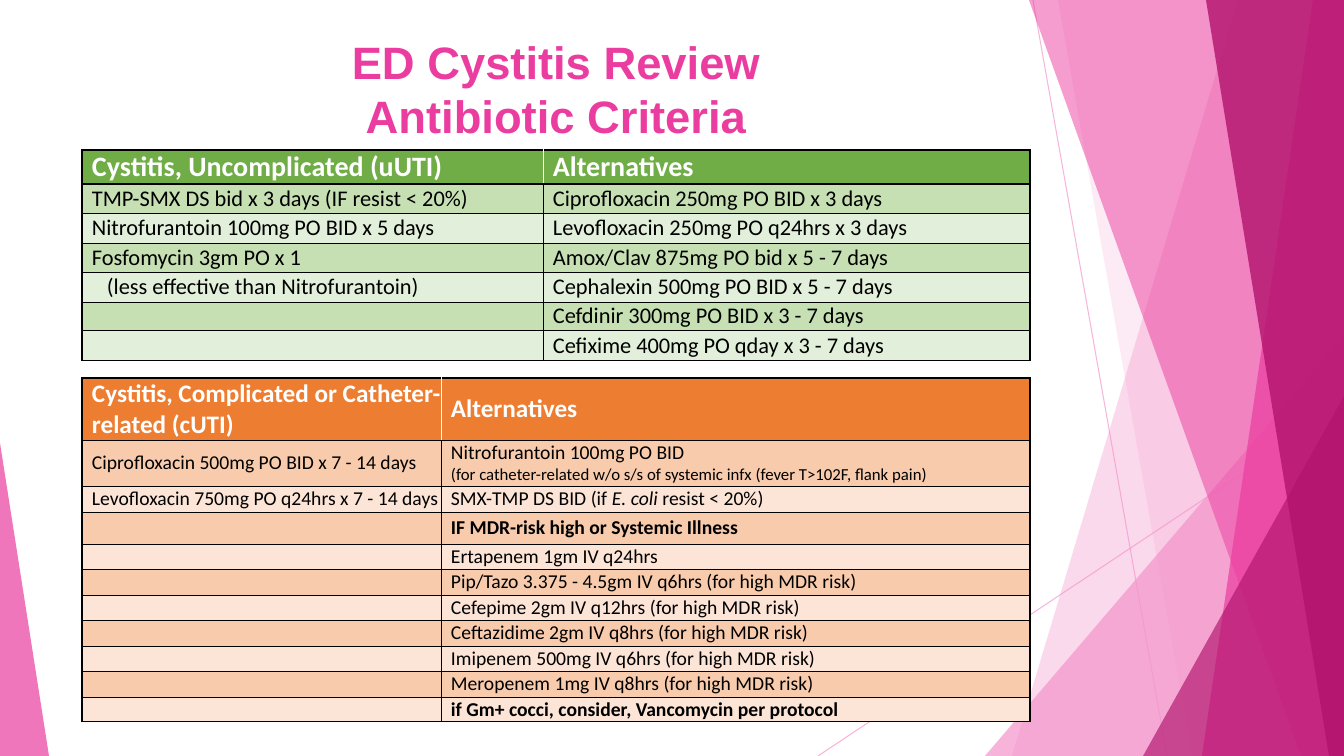
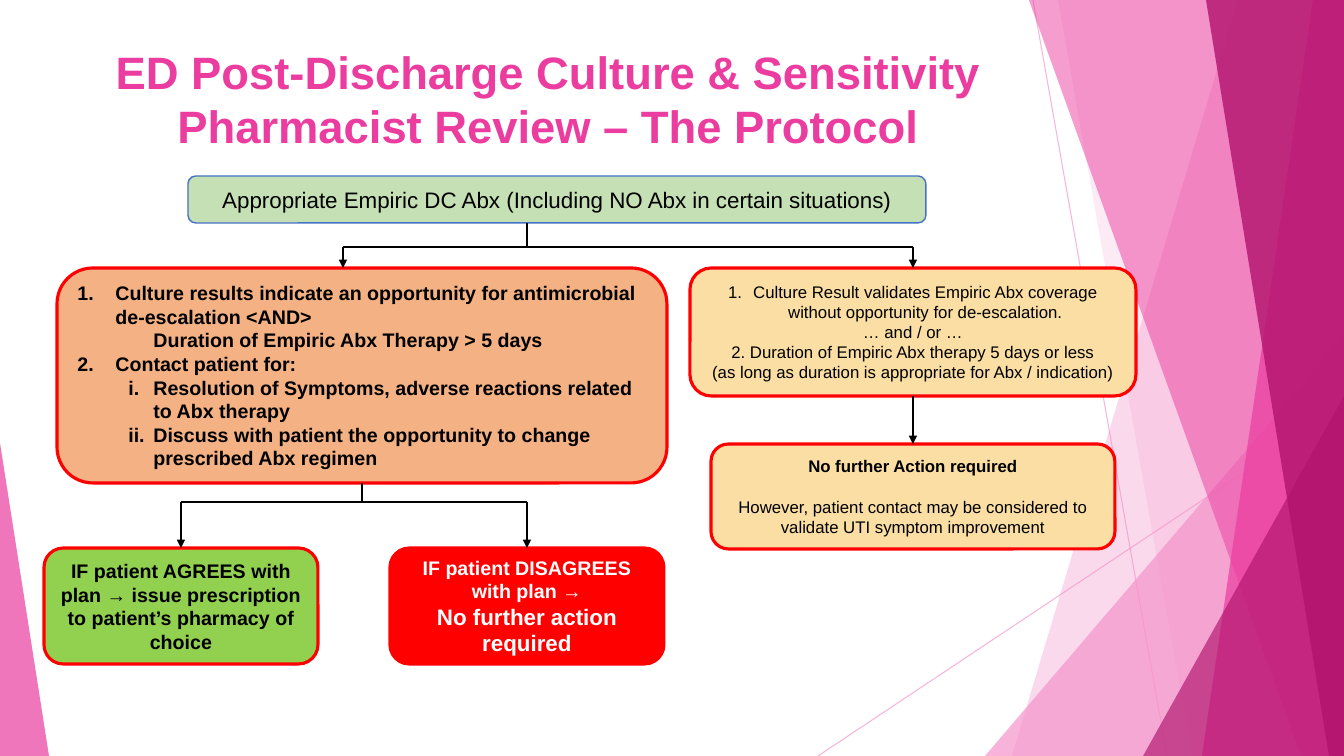
from dataclasses import dataclass
from typing import NamedTuple

from lxml.etree import SubElement
from pptx import Presentation
from pptx.dml.color import RGBColor
from pptx.enum.shapes import MSO_CONNECTOR, MSO_SHAPE
from pptx.enum.text import MSO_ANCHOR, PP_ALIGN
from pptx.oxml import parse_xml
from pptx.oxml.ns import nsdecls, qn
from pptx.util import Pt

WIDE, HIGH = 1344, 756
UNIT = 12192000 / WIDE
PINK, LIGHT, DEEP = "EB3D9F", "F496CB", "B2136D"
BLACK, WHITE, RED, CREAM = "000000", "FFFFFF", "FF0000", "FADEA3"
SANS, BODY = "Arial", "Calibri"


class Run(NamedTuple):
    text: str
    size: float = 14
    bold: bool = False
    slant: bool = False


@dataclass
class Para:
    runs: list[Run]
    left: int = 0
    hang: int = 0
    mark: str = ""
    start: int = 1
    gap: float = 0


class Band(NamedTuple):
    tint: str
    fade: int
    points: list[tuple[int, int]]


class Wedge(NamedTuple):
    box: tuple[int, int, int, int]
    peak: int
    tint: str
    fade: int


class Node(NamedTuple):
    name: str
    box: tuple[int, int, int, int]
    fill: str
    paras: list[Para]
    edge: str = RED
    weight: float = 2.25
    ink: str = BLACK
    align: PP_ALIGN = PP_ALIGN.CENTER


class Wire(NamedTuple):
    ends: tuple[int, int, int, int]
    weight: float = 1
    arrow: bool = False
    tail: str = ""
    head: str = ""


@dataclass
class Grid:
    box: tuple[int, int]
    cols: list[int]
    rows: list[int]
    tints: tuple[str, str, str]
    size: int
    edge: float
    cells: list[tuple[list[Para], list[Para]]]


def px(num: float) -> int:
    return round(num * UNIT)


def paint(code: str) -> RGBColor:
    return RGBColor.from_string(code)


def line(text: str, size: float = 14, bold: bool = False, **more) -> Para:
    return Para([Run(text, size, bold)], **more)


def fade(shape, part: int) -> None:
    for tint in shape._element.spPr.iter(qn("a:srgbClr")):
        SubElement(tint, qn("a:alpha"), val=str(part * 1000))


def fill(shape, tint: str) -> None:
    shape.shadow.inherit = False
    shape.fill.solid()
    shape.fill.fore_color.rgb = paint(tint)
    shape.line.fill.background()


def write(frame, paras: list[Para], face: str, ink: str, align: PP_ALIGN) -> None:
    frame.word_wrap = True
    for num, para in enumerate(paras):
        p = frame.paragraphs[0] if num == 0 else frame.add_paragraph()
        p.alignment = align
        if face == SANS:
            p.line_spacing = Pt(round(para.runs[0].size * 1.2, 1))
        if para.gap:
            p.space_before = Pt(para.gap)
        props = p._p.get_or_add_pPr()
        if para.left:
            props.set("marL", str(px(para.left)))
            props.set("indent", str(-px(para.hang)))
        if para.mark:
            mark = SubElement(props, qn("a:buAutoNum"), type=para.mark)
            if para.start > 1:
                mark.set("startAt", str(para.start))
        for run in para.runs:
            r = p.add_run()
            r.text = run.text
            r.font.name, r.font.size = face, Pt(run.size)
            r.font.bold, r.font.italic = run.bold, run.slant
            r.font.color.rgb = paint(ink)


def wire(slide, item: Wire, nodes: dict, tint: str = BLACK):
    link = slide.shapes.add_connector(MSO_CONNECTOR.STRAIGHT, *map(px, item.ends))
    if item.tail:
        link.begin_connect(nodes[item.tail], 2)
    if item.head:
        link.end_connect(nodes[item.head], 0)
    link.line.color.rgb = paint(tint)
    link.line.width = Pt(item.weight)
    if item.arrow:
        SubElement(link.line._get_or_add_ln(), qn("a:tailEnd"), type="triangle")
    SubElement(link._element.spPr, qn("a:effectLst"))
    return link


def band(slide, item: Band) -> None:
    pen = slide.shapes.build_freeform(*item.points[0], scale=UNIT)
    pen.add_line_segments(item.points[1:], close=True)
    shape = pen.convert_to_shape()
    fill(shape, item.tint)
    fade(shape, item.fade)


def wedge(slide, item: Wedge) -> None:
    shape = slide.shapes.add_shape(MSO_SHAPE.ISOSCELES_TRIANGLE, *map(px, item.box))
    shape.adjustments[0] = item.peak
    fill(shape, item.tint)
    fade(shape, item.fade)


def slant(top: int, foot: int, tint: str, part: int) -> Band:
    return Band(tint, part, [(top, 0), (WIDE, 0), (WIDE, HIGH), (foot, HIGH)])


RAYS = [Wire((1033, 0, 1167, HIGH), 0.75), Wire((WIDE, 406, 818, HIGH), 0.75)]
DECOR = [
    slant(1238, 1012, LIGHT, 36),
    slant(1058, 1192, LIGHT, 20),
    Wedge((985, 336, 359, 420), 1, LIGHT, 72),
    slant(1029, 1301, PINK, 50),
    slant(1313, 1202, PINK, 70),
    slant(1206, 1329, DEEP, 80),
    Wedge((1143, 396, 201, 360), 1, DEEP, 66),
    Wedge((0, 443, 49, 313), 0, PINK, 70),
]


def start(deck, box: tuple[int, int, int, int], title: list[str]):
    slide = deck.slides.add_slide(deck.slide_layouts[6])
    for ray in RAYS:
        fade(wire(slide, ray, {}, LIGHT), 70)
    for item in DECOR:
        (band if isinstance(item, Band) else wedge)(slide, item)
    frame = slide.shapes.add_textbox(*map(px, box)).text_frame
    write(frame, [line(text, 32.4, True) for text in title], SANS, PINK, PP_ALIGN.CENTER)
    return slide


def rule(cell, side: str, tint: str, weight: float, spot: int) -> None:
    cell._tc.get_or_add_tcPr().insert(spot, parse_xml(
        f'<a:{side} {nsdecls("a")} w="{int(weight * 12700)}"><a:solidFill>'
        f'<a:srgbClr val="{tint}"/></a:solidFill></a:{side}>'))


def table(slide, grid: Grid) -> None:
    last = len(grid.rows) - 1
    area = (*grid.box, sum(grid.cols), sum(grid.rows))
    sheet = slide.shapes.add_table(last + 1, 2, *map(px, area)).table
    sheet.horz_banding = False
    for col, wide in zip(sheet.columns, grid.cols):
        col.width = px(wide)
    for y, (row, high) in enumerate(zip(sheet.rows, grid.rows)):
        row.height = px(high)
        tint = grid.tints[0] if y == 0 else grid.tints[2 - y % 2]
        for x, paras in enumerate(grid.cells[y]):
            cell = sheet.cell(y, x)
            cell.margin_left, cell.margin_right = px(10), 0
            cell.margin_top = cell.margin_bottom = 0
            cell.vertical_anchor = MSO_ANCHOR.MIDDLE
            cell.fill.solid()
            cell.fill.fore_color.rgb = paint(tint)
            inner = WHITE if y == 0 else BLACK
            top = 1 if y == 0 else grid.edge if y == 1 else 0.5
            foot = grid.edge if y in (0, last) else 0.5
            sides = [
                ("lnL", inner if x else BLACK, 0.5 if x else 1),
                ("lnR", BLACK if x else inner, 1 if x else 0.5),
                ("lnT", BLACK, top),
                ("lnB", BLACK, foot),
            ]
            for spot, (side, ink, weight) in enumerate(sides):
                rule(cell, side, ink, weight, spot)
            if paras:
                write(cell.text_frame, paras, BODY, inner, PP_ALIGN.LEFT)
            else:
                SubElement(cell.text_frame.paragraphs[0]._p, qn("a:endParaRPr"),
                           sz=str(grid.size * 100))


def pair(left: str, right: str, size: int, bold: bool = False):
    return tuple([line(text, size, bold)] if text else [] for text in (left, right))


SIMPLE = Grid(
    (82, 150), [461, 487], [34] + [29, 30] * 3, ("70AD47", "C6E0B4", "E2EFDA"), 16, 1,
    [
        pair("Cystitis, Uncomplicated (uUTI)", "Alternatives", 20, True),
        pair("TMP-SMX DS bid x 3 days (IF resist < 20%)", "Ciprofloxacin 250mg PO BID x 3 days", 16),
        pair("Nitrofurantoin 100mg PO BID x 5 days", "Levofloxacin 250mg PO q24hrs x 3 days", 16),
        pair("Fosfomycin 3gm PO x 1", "Amox/Clav 875mg PO bid x 5 - 7 days", 16),
        ([line("(less effective than Nitrofurantoin)", 16, left=15)],
         [line("Cephalexin 500mg PO BID x 5 - 7 days", 16)]),
        pair("", "Cefdinir 300mg PO BID x 3 - 7 days", 16),
        pair("", "Cefixime 400mg PO qday x 3 - 7 days", 16),
    ])

RISK = ["Pip/Tazo 3.375 - 4.5gm IV q6hrs", "Cefepime 2gm IV q12hrs", "Ceftazidime 2gm IV q8hrs",
        "Imipenem 500mg IV q6hrs", "Meropenem 1mg IV q8hrs"]
COMPLEX = Grid(
    (82, 378), [359, 589], [62, 46, 26, 32] + [25, 26] * 3 + [25],
    ("ED7D31", "F8CBAD", "FCE4D6"), 14, 0.5,
    [
        pair("Cystitis, Complicated or Catheter-related (cUTI)", "Alternatives", 18, True),
        ([line("Ciprofloxacin 500mg PO BID x 7 - 14 days")],
         [line("Nitrofurantoin 100mg PO BID"),
          line("(for catheter-related w/o s/s of systemic infx (fever T>102F, flank pain)", 12)]),
        ([line("Levofloxacin 750mg PO q24hrs x 7 - 14 days")],
         [Para([Run("SMX-TMP DS BID (if "), Run("E. coli ", slant=True), Run("resist < 20%)")])]),
        pair("", "IF MDR-risk high or Systemic Illness", 14, True),
        pair("", "Ertapenem 1gm IV q24hrs", 14),
        *[pair("", f"{drug} (for high MDR risk)", 14) for drug in RISK],
        pair("", "if Gm+ cocci, consider, Vancomycin per protocol", 14, True),
    ])

ARAB, ROMAN = "arabicPeriod", "romanLcPeriod"
NODES = [
    Node("banner", (188, 176, 738, 47), "C5E0B4",
         [line("Appropriate Empiric DC Abx (Including NO Abx in certain situations)", 16)],
         "4472C4", 1),
    Node("contact", (57, 268, 610, 215), "F4B183", [
        line("Culture results indicate an opportunity for antimicrobial de-escalation <AND>",
             14, True, left=38, hang=38, mark=ARAB),
        line("Duration of Empiric Abx Therapy > 5 days", 14, True, left=76),
        line("Contact patient for:", 14, True, left=38, hang=38, mark=ARAB, start=2),
        line("Resolution of Symptoms, adverse reactions related to Abx therapy",
             14, True, left=76, hang=25, mark=ROMAN),
        line("Discuss with patient the opportunity to change prescribed Abx regimen",
             14, True, left=76, hang=25, mark=ROMAN),
    ], align=PP_ALIGN.LEFT),
    Node("valid", (690, 268, 446, 128), CREAM, [
        line("Culture Result validates Empiric Abx coverage without opportunity for de-escalation.",
             12, left=25, hang=25, mark=ARAB),
        line("… and / or …", 12),
        line("2. Duration of Empiric Abx therapy 5 days or less", 12),
        line("(as long as duration is appropriate for Abx / indication)", 12),
    ]),
    Node("done", (711, 444, 404, 105), CREAM, [
        line("No further Action required", 12, True),
        line("However, patient contact may be considered to validate UTI symptom improvement",
             12, gap=14.4),
    ]),
    Node("agree", (44, 548, 274, 116), "92D050", [
        line("IF patient AGREES with plan → issue prescription to patient’s pharmacy of choice",
             14, True)]),
    Node("refuse", (390, 548, 274, 116), RED, [
        line("IF patient DISAGREES with plan →", 14, True),
        line("No further action required", 16, True)], ink=WHITE),
]
WIRES = [
    Wire((527, 223, 527, 247)),
    Wire((343, 247, 913, 247)),
    Wire((913, 247, 913, 268), arrow=True, head="valid"),
    Wire((343, 247, 343, 268), arrow=True),
    Wire((913, 396, 913, 444), arrow=True, tail="valid", head="done"),
    Wire((362, 483, 362, 502), tail="contact"),
    Wire((181, 502, 527, 502), 1.5),
    Wire((181, 502, 181, 548), 1.5, True, head="agree"),
    Wire((527, 502, 527, 548), 1.5, True, head="refuse"),
]


def place(slide, node: Node):
    shape = slide.shapes.add_shape(MSO_SHAPE.ROUNDED_RECTANGLE, *map(px, node.box))
    fill(shape, node.fill)
    shape.line.color.rgb = paint(node.edge)
    shape.line.width = Pt(node.weight)
    shape.text_frame.vertical_anchor = MSO_ANCHOR.MIDDLE
    write(shape.text_frame, node.paras, SANS, node.ink, node.align)
    return shape


def main() -> None:
    deck = Presentation()
    deck.slide_width, deck.slide_height = px(WIDE), px(HIGH)
    drugs = start(deck, (82, 29, 948, 120), ["ED Cystitis Review", "Antibiotic Criteria"])
    for grid in (SIMPLE, COMPLEX):
        table(drugs, grid)
    flow = start(deck, (74, 39, 948, 132),
                 ["ED Post-Discharge Culture & Sensitivity Pharmacist Review – The Protocol"])
    nodes = {node.name: place(flow, node) for node in NODES}
    for item in WIRES:
        wire(flow, item, nodes)
    deck.save("out.pptx")


if __name__ == "__main__":
    main()
